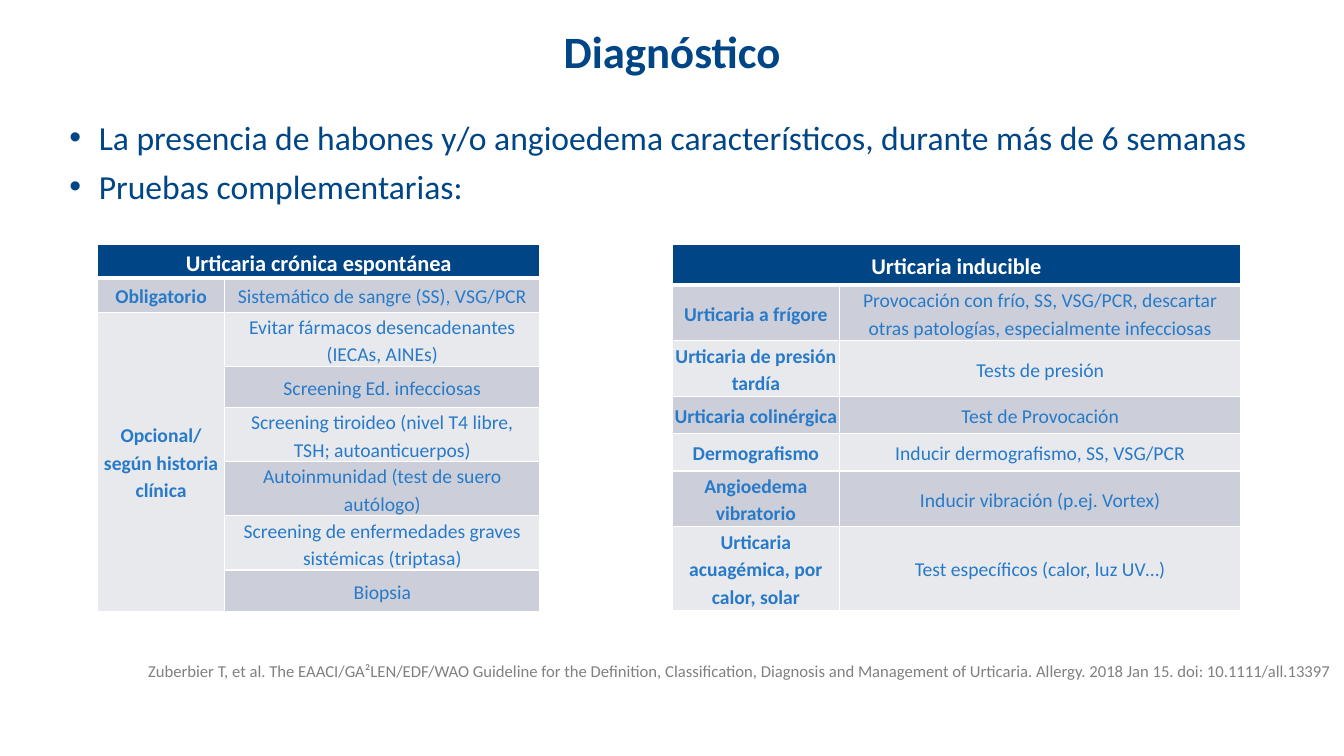
from pptx import Presentation
from pptx.dml.color import RGBColor
from pptx.enum.text import MSO_ANCHOR, PP_ALIGN
from pptx.oxml.ns import qn
from pptx.util import Cm, Pt
from lxml.etree import SubElement

FONT = "Calibri"
COLORS = {
    "navy": "004586",
    "blue": "287AC8",
    "white": "FFFFFF",
    "dark_band": "CCCFD9",
    "light_band": "E7E9ED",
    "grey": "808080",
}

# Each row: height in cm, test group, test; an empty group continues the one above
SPONTANEOUS = [
    (0.86, "Obligatorio", "Sistemático de sangre (SS), VSG/PCR"),
    (0.84, "Opcional/ según historia clínica",
     "Evitar fármacos desencadenantes (IECAs, AINEs)"),
    (1.04, "", "Screening Ed. infecciosas"),
    (1.04, "", "Screening tiroideo (nivel T4 libre, TSH; autoanticuerpos)"),
    (1.04, "", "Autoinmunidad (test de suero autólogo)"),
    (1.04, "", "Screening de enfermedades graves sistémicas (triptasa)"),
    (1.04, "", "Biopsia"),
]
INDUCIBLE = [
    (1.4, "Urticaria a frígore",
     "Provocación con frío, SS, VSG/PCR, descartar otras patologías, "
     "especialmente infecciosas"),
    (1.4, "Urticaria de presión tardía", "Tests de presión"),
    (0.94, "Urticaria colinérgica", "Test de Provocación"),
    (0.94, "Dermografismo", "Inducir dermografismo, SS, VSG/PCR"),
    (1.4, "Angioedema vibratorio", "Inducir vibración (p.ej. Vortex)"),
    (2.11, "Urticaria acuagémica, por calor, solar",
     "Test específicos (calor, luz UV…)"),
]


def format_para(para, size, color, bold=False, align=PP_ALIGN.LEFT):
    para.alignment = align
    for span in para.runs:
        span.font.name = FONT
        span.font.size = Pt(size)
        span.font.bold = bold
        span.font.color.rgb = RGBColor.from_string(COLORS[color])


def add_text(page, left, top, width, height, text, size, color, **style):
    box = page.shapes.add_textbox(Cm(left), Cm(top), Cm(width), Cm(height))
    frame = box.text_frame
    frame.word_wrap = True
    frame.text = text
    for para in frame.paragraphs:
        format_para(para, size, color, **style)
    return frame


def add_bullets(frame):
    for index, para in enumerate(frame.paragraphs):
        properties = para._p.get_or_add_pPr()
        properties.set("marL", str(Cm(2.24)))
        properties.set("indent", str(Cm(-0.74)))
        SubElement(properties, qn("a:buFont"), typeface="Arial")
        SubElement(properties, qn("a:buChar"), char="•")
        if index:
            para.space_before = Pt(6)


def set_borders(cell, bottom):
    properties = cell._tc.get_or_add_tcPr()
    for side, width in (("L", 1), ("R", 1), ("T", 1), ("B", bottom)):
        line = SubElement(properties, qn(f"a:ln{side}"), w=str(Pt(width)))
        fill = SubElement(line, qn("a:solidFill"))
        SubElement(fill, qn("a:srgbClr"), val=COLORS["white"])


def fill_cell(cell, text, fill, size=14, color="blue", bold=False, inset=0.18, bottom=1):
    set_borders(cell, bottom)
    cell.fill.solid()
    cell.fill.fore_color.rgb = RGBColor.from_string(COLORS[fill])
    cell.vertical_anchor = MSO_ANCHOR.MIDDLE
    cell.margin_left = cell.margin_right = Cm(inset)
    cell.margin_top = cell.margin_bottom = 0
    cell.text_frame.text = text
    para = cell.text_frame.paragraphs[0]
    para.line_spacing = 1.15
    para.space_after = Pt(10)
    format_para(para, size, color, bold, PP_ALIGN.CENTER)


def add_test_table(page, left, top, widths, header, header_height, tests):
    heights = [header_height] + [height for height, _, _ in tests]
    table = page.shapes.add_table(
        len(heights), 2, Cm(left), Cm(top), Cm(sum(widths)), Cm(sum(heights))).table
    for column, width in zip(table.columns, widths):
        column.width = Cm(width)
    for row, height in zip(table.rows, heights):
        row.height = Cm(height)

    # Header across both columns
    for column, text in enumerate((header, "")):
        fill_cell(table.cell(0, column), text, "navy", 16, "white", True, bottom=3)
    table.cell(0, 0).merge(table.cell(0, 1))

    # Banded rows, with each group name spanning its tests
    group_rows = []
    for row, (_, group, test) in enumerate(tests, start=1):
        band = "dark_band" if row % 2 else "light_band"
        fill_cell(table.cell(row, 0), group, band, bold=True, inset=0.05)
        fill_cell(table.cell(row, 1), test, band)
        if group:
            group_rows.append(row)
    for first, following in zip(group_rows, group_rows[1:] + [len(heights)]):
        if following - first > 1:
            table.cell(first, 0).merge(table.cell(following - 1, 0))


def main():
    deck = Presentation()
    deck.slide_width, deck.slide_height = Cm(33.87), Cm(19.05)
    page = deck.slides.add_slide(deck.slide_layouts[6])

    # Title and key points
    title = add_text(page, 1.7, 0.43, 30.48, 1.68, "Diagnóstico", 32, "navy",
                     bold=True, align=PP_ALIGN.CENTER)
    title.vertical_anchor = MSO_ANCHOR.MIDDLE
    points = add_text(
        page, 0, 2.82, 32.18, 12.75,
        "La presencia de habones y/o angioedema característicos, durante más de 6 semanas\n"
        "Pruebas complementarias:", 24, "navy")
    add_bullets(points)

    # Complementary tests
    add_test_table(page, 2.46, 6.17, (3.2, 7.95),
                   "Urticaria crónica espontánea", 0.84, SPONTANEOUS)
    add_test_table(page, 16.94, 6.15, (4.22, 10.11),
                   "Urticaria inducible", 1.04, INDUCIBLE)

    # Reference
    reference = add_text(
        page, 1.7, 16.54, 32.17, 0.81,
        "Zuberbier T, et al. The EAACI/GA²LEN/EDF/WAO Guideline for the Definition, "
        "Classification, Diagnosis and Management of Urticaria. Allergy. 2018 Jan 15. "
        "doi: 10.1111/all.13397", 11.9, "grey", align=PP_ALIGN.RIGHT)
    reference.margin_right = Cm(0.36)

    deck.save("out.pptx")


if __name__ == "__main__":
    main()
